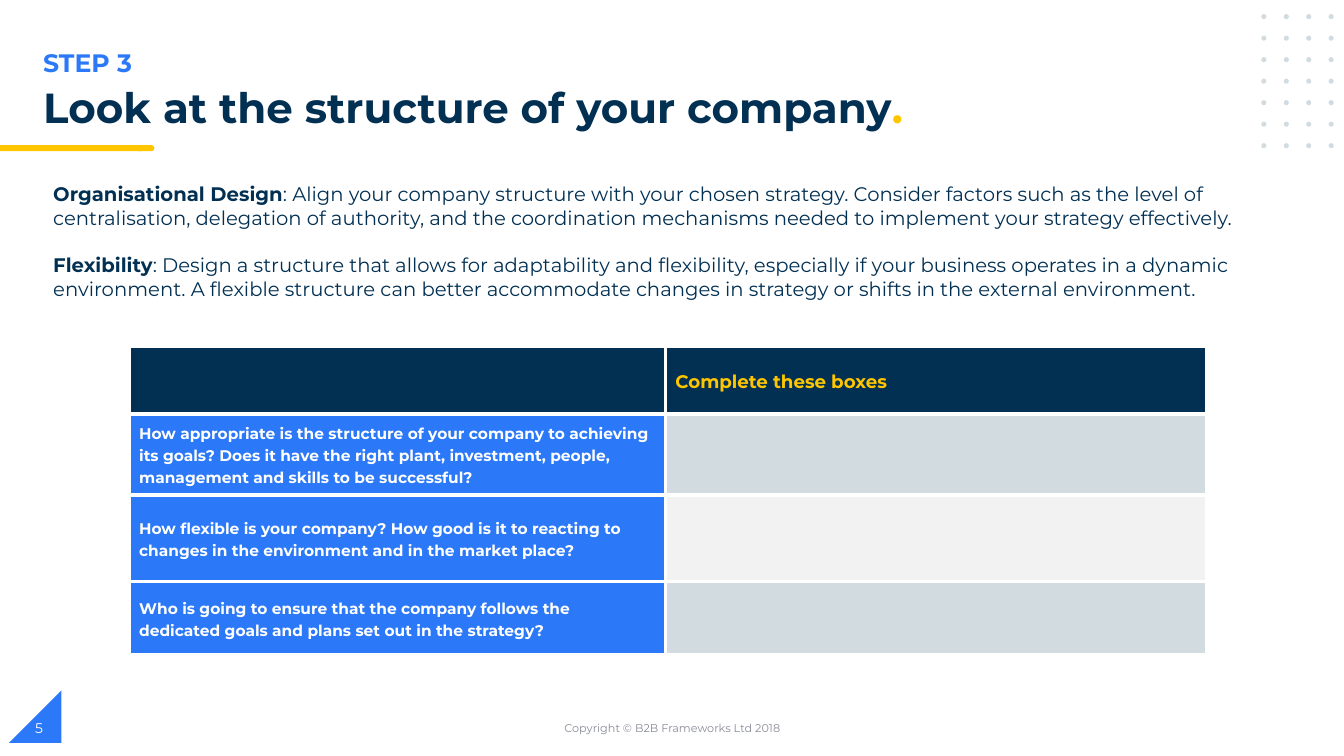
import lxml.etree
import pptx
import pptx.dml.color
import pptx.enum.shapes
import pptx.enum.text
import pptx.oxml.ns
import pptx.util

Inches = pptx.util.Inches
Pt = pptx.util.Pt
RGBColor = pptx.dml.color.RGBColor
Shape = pptx.enum.shapes.MSO_SHAPE
Anchor = pptx.enum.text.MSO_ANCHOR
Align = pptx.enum.text.PP_ALIGN

NAVY = RGBColor(0x02, 0x30, 0x53)
BLUE = RGBColor(0x2B, 0x79, 0xF8)
YELLOW = RGBColor(0xFF, 0xC6, 0x00)
MIST = RGBColor(0xD1, 0xDB, 0xE0)
PALE = RGBColor(0xF2, 0xF2, 0xF2)
GREY = RGBColor(0x88, 0x8C, 0x97)
WHITE = RGBColor(0xFF, 0xFF, 0xFF)
FONT = "Montserrat"

QUESTIONS = [
    ("How appropriate is the structure of your company to achieving its goals? "
     "Does it have the right plant, investment, people, management and skills to be successful?", 0.8, MIST),
    ("How flexible is your company? How good is it to reacting to changes in the "
     "environment and in the market place?", 0.86, PALE),
    ("Who is going to ensure that the company follows the dedicated goals and plans "
     "set out in the strategy?", 0.73, MIST),
]
ADVICE = [
    ("Organisational Design",
     ": Align your company structure with your chosen strategy. Consider factors such as the level of "
     "centralisation, delegation of authority, and the coordination mechanisms needed to implement "
     "your strategy effectively."),
    ("Flexibility",
     ": Design a structure that allows for adaptability and flexibility, especially if your business "
     "operates in a dynamic environment. A flexible structure can better accommodate changes in "
     "strategy or shifts in the external environment."),
]


def add_span(para, text, size, color, bold=False):
    """Add one formatted run to a paragraph."""
    span = para.add_run()
    span.text = text
    span.font.name = FONT
    span.font.size = Pt(size)
    span.font.bold = bold
    span.font.color.rgb = color


def add_box(page, left, top, width, height, anchor=Anchor.TOP):
    """Add a wrapping text box and return its text frame."""
    box = page.shapes.add_textbox(Inches(left), Inches(top), Inches(width), Inches(height))
    frame = box.text_frame
    frame.word_wrap = True
    frame.vertical_anchor = anchor
    return frame


def add_plain_shape(page, kind, left, top, width, height, color):
    """Add a filled shape without outline or shadow."""
    shape = page.shapes.add_shape(kind, Inches(left), Inches(top), Inches(width), Inches(height))
    shape.shadow.inherit = False
    shape.fill.solid()
    shape.fill.fore_color.rgb = color
    shape.line.fill.background()
    return shape


def add_decoration(page):
    """Draw the corner triangle, the title underline and the dot grid."""
    corner = add_plain_shape(page, Shape.RIGHT_TRIANGLE, 0.09, 6.85, 0.52, 0.52, BLUE)
    corner._element.spPr.xfrm.set("flipH", "1")
    add_plain_shape(page, Shape.FLOWCHART_TERMINATOR, 1.34, 1.44, 0.19, 0.06, YELLOW)
    add_plain_shape(page, Shape.RECTANGLE, 0, 1.44, 1.41, 0.06, YELLOW)
    for row in range(7):
        for column in range(4):
            add_plain_shape(page, Shape.OVAL, 12.51 + column * 0.2225, 0.14 + row * 0.2135, 0.05, 0.05, MIST)


def add_headings(page):
    """Write the step label and the title."""
    add_span(add_box(page, 0.33, 0.42, 6.69, 0.4).paragraphs[0], "STEP 3", 18, BLUE, True)
    title = add_box(page, 0.33, 0.82, 11.59, 0.56).paragraphs[0]
    title.line_spacing = 0.9
    add_span(title, "Look at the structure of your company", 30, NAVY, True)
    add_span(title, ".", 30, YELLOW, True)


def add_advice(page):
    """Write the advice paragraphs, each with a bold lead-in."""
    frame = add_box(page, 0.43, 1.76, 12.1, 1.28)
    for index, (lead, detail) in enumerate(ADVICE):
        para = frame.add_paragraph() if index else frame.paragraphs[0]
        if index:
            para.space_before = Pt(17)
        add_span(para, lead, 14, NAVY, True)
        add_span(para, detail, 14, NAVY)


def style_cell(cell, fill, text="", size=11, color=WHITE):
    """Give a cell white borders, a fill and optional bold text."""
    qn = pptx.oxml.ns.qn
    properties = cell._tc.get_or_add_tcPr()
    for side in ("a:lnL", "a:lnR", "a:lnT", "a:lnB"):
        border = lxml.etree.SubElement(properties, qn(side), w=str(Pt(3)))
        solid = lxml.etree.SubElement(border, qn("a:solidFill"))
        lxml.etree.SubElement(solid, qn("a:srgbClr"), val=str(WHITE))
    cell.fill.solid()
    cell.fill.fore_color.rgb = fill
    cell.vertical_anchor = Anchor.MIDDLE
    cell.margin_left = cell.margin_right = Inches(0.1)
    cell.margin_top = cell.margin_bottom = 0
    if text:
        para = cell.text_frame.paragraphs[0]
        para.line_spacing = 1.15
        add_span(para, text, size, color, True)


def add_question_table(page):
    """Build the table of questions with boxes to complete."""
    table = page.shapes.add_table(
        len(QUESTIONS) + 1, 2, Inches(1.28), Inches(3.43), Inches(10.69), Inches(3.07)).table
    table.columns[0].width = Inches(5.32)
    table.columns[1].width = Inches(5.37)
    table.rows[0].height = Inches(0.68)
    style_cell(table.cell(0, 0), NAVY)
    style_cell(table.cell(0, 1), NAVY, "Complete these boxes", 13, YELLOW)
    for index, (question, height, answer_fill) in enumerate(QUESTIONS, 1):
        table.rows[index].height = Inches(height)
        style_cell(table.cell(index, 0), BLUE, question)
        style_cell(table.cell(index, 1), answer_fill)


def add_footer(page):
    """Write the copyright line and the page number."""
    para = add_box(page, 4.42, 7.02, 4.5, 0.4, Anchor.MIDDLE).paragraphs[0]
    para.alignment = Align.CENTER
    add_span(para, "Copyright © B2B Frameworks Ltd 2018", 8, GREY)
    number = add_box(page, 0.25, 7.02, 3, 0.4, Anchor.MIDDLE).paragraphs[0]
    add_span(number, "5", 10, WHITE)


def main():
    """Build the slide and save the deck."""
    deck = pptx.Presentation()
    deck.slide_width = Inches(13.33)
    deck.slide_height = Inches(7.5)
    page = deck.slides.add_slide(deck.slide_layouts[6])
    add_decoration(page)
    add_headings(page)
    add_footer(page)
    add_question_table(page)
    add_advice(page)
    deck.save("out.pptx")


if __name__ == "__main__":
    main()
